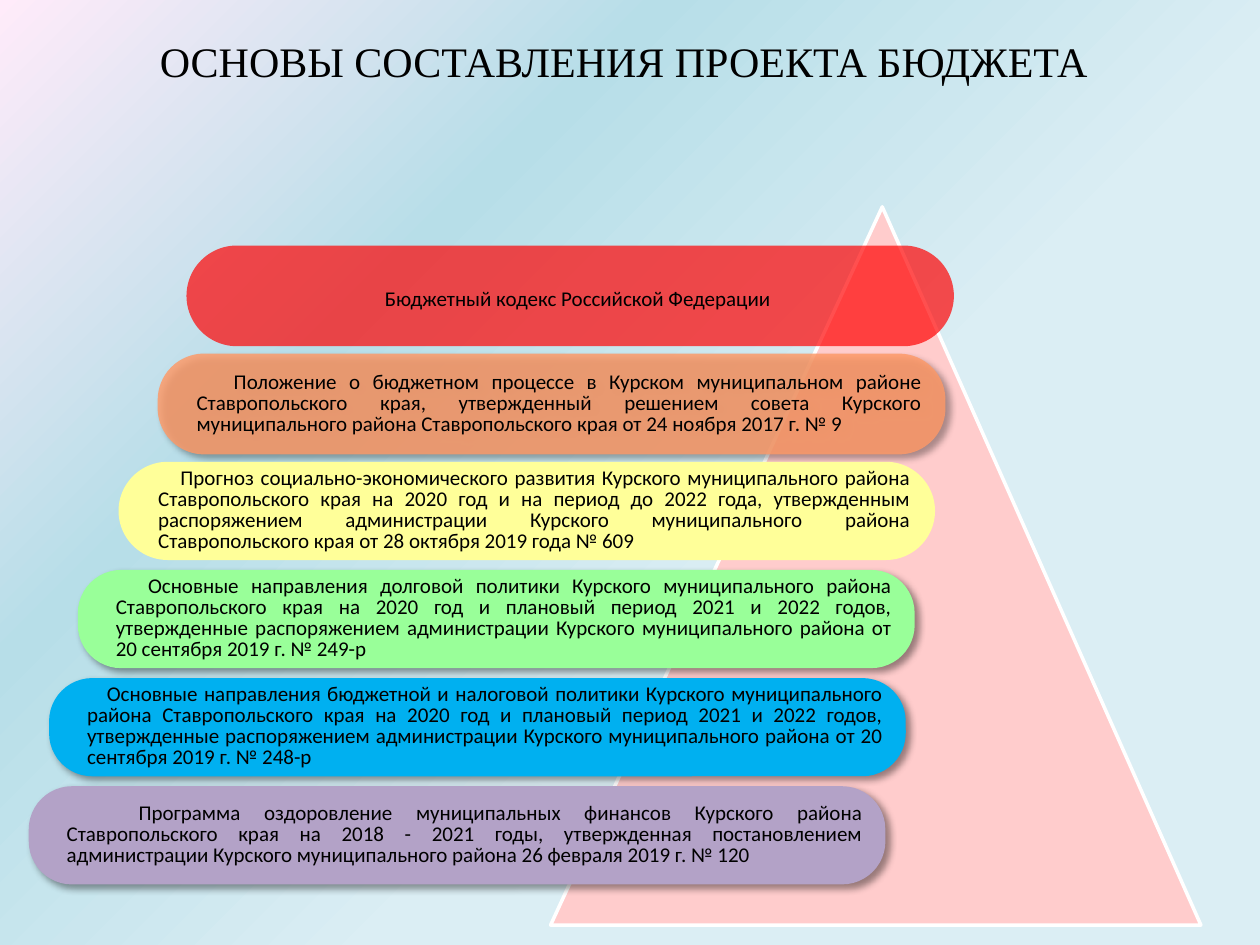
from dataclasses import dataclass

from pptx import Presentation
from pptx.dml.color import RGBColor as RGB
from pptx.enum.shapes import MSO_SHAPE as SHAPE
from pptx.enum.text import MSO_ANCHOR as ANCHOR, MSO_AUTO_SIZE as AUTO, PP_ALIGN as ALIGN
from pptx.oxml import parse_xml
from pptx.oxml.ns import nsdecls, qn
from pptx.util import Cm, Pt


@dataclass(frozen=True)
class Theme:
    title_font: str = "Times New Roman"
    body_font: str = "Calibri"
    title_size: int = 24
    body_size: int = 12
    text: str = "000000"
    outline: str = "FFFFFF"
    pyramid: str = "FFCCCC"
    background: tuple = ((0, "DBEEF4"), (40, "DBEEF4"), (70, "B7DEE8"), (100, "FFEBFA"))
    red: str = "FF0000"
    orange: str = "FF9966"
    yellow: str = "FFFF99"
    green: str = "99FF99"
    blue: str = "00B0F0"
    violet: str = "B3A2C7"


class Deck:
    def __init__(self, theme):
        self.theme = theme
        self.prs = Presentation()
        self.prs.slide_width, self.prs.slide_height = Cm(25.4), Cm(19.05)
        self.s = self.prs.slides.add_slide(self.prs.slide_layouts[5])

    def background(self):
        fill = self.s.background.fill
        fill.gradient()
        stops = "".join(
            f'<a:gs pos="{pos * 1000}"><a:srgbClr val="{color}"/></a:gs>'
            for pos, color in self.theme.background
        )
        grad = parse_xml(
            f'<a:gradFill {nsdecls("a")} rotWithShape="1"><a:gsLst>{stops}</a:gsLst>'
            '<a:path path="circle"><a:fillToRect l="100000" t="100000"/></a:path></a:gradFill>'
        )
        old = next(self.s.element.iter(qn("a:gradFill")))
        old.getparent().replace(old, grad)

    def font(self, p, name, size):
        for r in p.runs:
            r.font.name, r.font.size = name, Pt(size)
            r.font.color.rgb = RGB.from_string(self.theme.text)

    def title(self, text, left, top, width, height):
        sp = self.s.shapes.title
        sp.left, sp.top, sp.width, sp.height = Cm(left), Cm(top), Cm(width), Cm(height)
        tf = sp.text_frame
        tf.text = text
        tf.word_wrap, tf.auto_size = True, AUTO.NONE
        tf.vertical_anchor = ANCHOR.TOP
        p = tf.paragraphs[0]
        p.alignment = ALIGN.CENTER
        self.font(p, self.theme.title_font, self.theme.title_size)

    def shape(self, kind, left, top, width, height, fill, adj):
        sp = self.s.shapes.add_shape(kind, Cm(left), Cm(top), Cm(width), Cm(height))
        sp.adjustments[0] = adj
        sp.shadow.inherit = False
        sp.fill.solid()
        sp.fill.fore_color.rgb = RGB.from_string(fill)
        sp.line.fill.background()
        return sp

    def pyramid(self, left, top, width, height):
        sp = self.shape(SHAPE.ISOSCELES_TRIANGLE, left, top, width, height, self.theme.pyramid, 0.51)
        sp.line.color.rgb = RGB.from_string(self.theme.outline)
        sp.line.width = Pt(2)

    def bar(self, text, left, top, width, height, fill, adj, alpha=100,
            shadow=True, align=ALIGN.JUSTIFY, spacing=12, indent=0):
        sp = self.shape(SHAPE.ROUNDED_RECTANGLE, left, top, width, height, fill, adj)
        if alpha < 100:
            self.transparency(sp, alpha)
        if shadow:
            self.drop_shadow(sp)
        tf = sp.text_frame
        tf.text = text
        tf.word_wrap, tf.vertical_anchor = True, ANCHOR.MIDDLE
        tf.margin_left, tf.margin_right = Cm(0.51), Cm(0.2)
        tf.margin_top = tf.margin_bottom = Cm(0.13)
        p = tf.paragraphs[0]
        p.alignment, p.line_spacing = align, Pt(spacing)
        if indent:
            p._p.get_or_add_pPr().set("indent", str(Cm(indent)))
        self.font(p, self.theme.body_font, self.theme.body_size)

    def transparency(self, sp, alpha):
        color = sp._element.spPr.find(qn("a:solidFill"))[0]
        color.append(parse_xml(f'<a:alpha {nsdecls("a")} val="{alpha * 1000}"/>'))

    def drop_shadow(self, sp):
        effects = sp._element.spPr.find(qn("a:effectLst"))
        effects.append(parse_xml(
            f'<a:outerShdw {nsdecls("a")} blurRad="{Pt(4)}" dist="{Pt(3)}" dir="2700000" '
            'algn="tl" rotWithShape="0"><a:srgbClr val="000000"><a:alpha val="40000"/>'
            '</a:srgbClr></a:outerShdw>'
        ))


def main():
    theme = Theme()
    deck = Deck(theme)
    deck.background()
    deck.title("ОСНОВЫ СОСТАВЛЕНИЯ ПРОЕКТА БЮДЖЕТА", 2.77, 0.58, 19.61, 1.27)
    deck.pyramid(11.1, 4.17, 13.11, 14.48)
    bars = [
        ("Бюджетный кодекс Российской Федерации",
         3.76, 15.47, 2.03, theme.red, 0.5,
         dict(alpha=69, shadow=False, align=ALIGN.CENTER, spacing=17)),
        ("Положение о бюджетном процессе в Курском муниципальном районе Ставропольского края, "
         "утвержденный решением совета Курского муниципального района Ставропольского края "
         "от 24 ноября 2017 г. № 9",
         3.18, 15.88, 2.03, theme.orange, 0.46, dict(alpha=82, indent=0.75)),
        ("Прогноз социально-экономического развития Курского муниципального района "
         "Ставропольского края на 2020 год и на период до 2022 года, утвержденным распоряжением "
         "администрации Курского муниципального района Ставропольского края "
         "от 28 октября 2019 года № 609",
         2.39, 16.46, 1.98, theme.yellow, 0.5, dict(shadow=False, indent=0.45)),
        ("Основные направления долговой политики Курского муниципального района "
         "Ставропольского края на 2020 год и плановый период 2021 и 2022 годов, утвержденные "
         "распоряжением администрации Курского муниципального района "
         "от 20 сентября 2019 г. № 249-р",
         1.57, 16.87, 1.98, theme.green, 0.44, dict(indent=0.65)),
        ("Основные направления бюджетной и налоговой политики Курского муниципального района "
         "Ставропольского края на 2020 год и плановый период 2021 и 2022 годов, утвержденные "
         "распоряжением администрации Курского муниципального района "
         "от 20 сентября 2019 г. № 248-р",
         0.99, 17.27, 1.98, theme.blue, 0.44, dict(indent=0.4)),
        ("Программа оздоровление муниципальных финансов Курского района Ставропольского края "
         "на 2018 - 2021 годы, утвержденная постановлением администрации Курского "
         "муниципального района 26 февраля 2019 г. № 120",
         0.58, 17.27, 1.98, theme.violet, 0.44, dict(indent=1.45)),
    ]
    first_top, step = 4.95, 2.18
    for i, (text, left, width, height, fill, adj, options) in enumerate(bars):
        deck.bar(text, left, first_top + i * step, width, height, fill, adj, **options)
    deck.prs.save("out.pptx")


if __name__ == "__main__":
    main()
